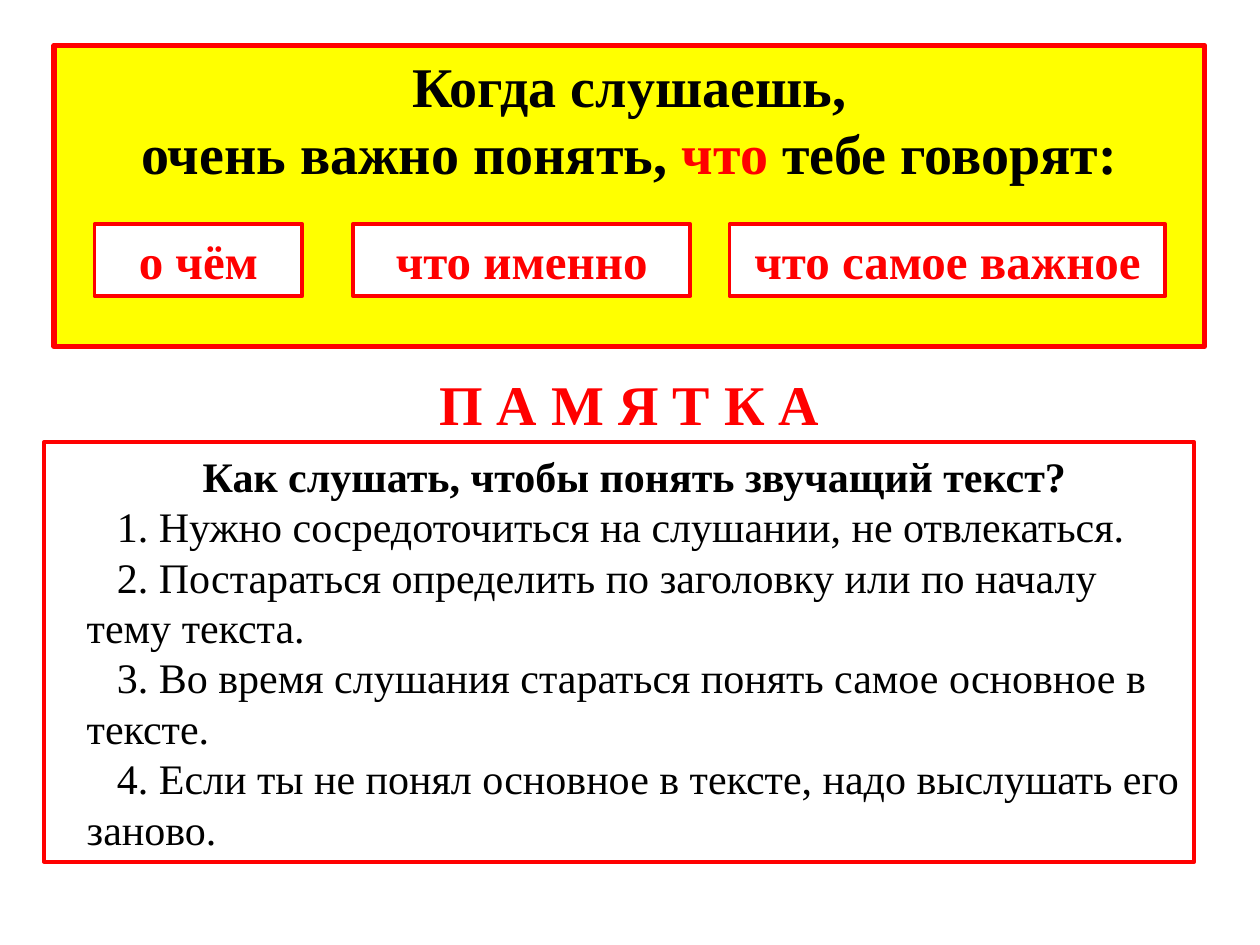
from pptx import Presentation
from pptx.dml.color import RGBColor
from pptx.enum.shapes import MSO_SHAPE
from pptx.enum.text import MSO_ANCHOR, PP_ALIGN
from pptx.util import Inches, Pt
from lxml import etree

RED = RGBColor(0xFF, 0x00, 0x00)
YELLOW = RGBColor(0xFF, 0xFF, 0x00)
WHITE = RGBColor(0xFF, 0xFF, 0xFF)
BLACK = RGBColor(0x00, 0x00, 0x00)
RECTANGLE = MSO_SHAPE.RECTANGLE
TOP, MIDDLE = MSO_ANCHOR.TOP, MSO_ANCHOR.MIDDLE
LEFT, CENTER = PP_ALIGN.LEFT, PP_ALIGN.CENTER
DRAWING = "{http://schemas.openxmlformats.org/drawingml/2006/main}"


class MemoSlide:
    font_name = "Times New Roman"
    indent = Inches(0.24)

    def __init__(self, page):
        self.page = page

    def rectangle(self, left, top, width, height, line_width, fill=None, anchor=TOP):
        box = self.page.shapes.add_shape(
            RECTANGLE, Inches(left), Inches(top), Inches(width), Inches(height))
        box.shadow.inherit = False
        if fill is None:
            box.fill.background()
        else:
            box.fill.solid()
            box.fill.fore_color.rgb = fill
        box.line.color.rgb = RED
        box.line.width = Pt(line_width)
        box.text_frame.word_wrap = True
        box.text_frame.vertical_anchor = anchor
        return box

    def text_box(self, left, top, width, height):
        box = self.page.shapes.add_textbox(
            Inches(left), Inches(top), Inches(width), Inches(height))
        box.text_frame.word_wrap = True
        return box

    def style(self, para, size, color, bold=True, align=CENTER):
        para.alignment = align
        for span in para.runs:
            span.font.name = self.font_name
            span.font.size = Pt(size)
            span.font.bold = bold
            span.font.color.rgb = color

    def set_text(self, box, text, size, color):
        box.text_frame.text = text
        for para in box.text_frame.paragraphs:
            self.style(para, size, color)

    def number(self, para):
        properties = para._p.get_or_add_pPr()
        properties.set("marL", str(self.indent))
        properties.set("indent", str(self.indent))
        etree.SubElement(properties, DRAWING + "buFont", typeface=self.font_name)
        etree.SubElement(properties, DRAWING + "buAutoNum", type="arabicPeriod")


def main():
    deck = Presentation()
    deck.slide_width, deck.slide_height = Inches(10), Inches(7.5)
    memo = MemoSlide(deck.slides.add_slide(deck.slide_layouts[6]))

    # Yellow panel with one highlighted word
    panel = memo.rectangle(0.43, 0.36, 9.13, 2.39, 3, YELLOW)
    memo.set_text(panel, "Когда слушаешь,\nочень важно понять, ", 32, BLACK)
    sentence = panel.text_frame.paragraphs[1]
    for text in ("что", " тебе говорят:"):
        sentence.add_run().text = text
    memo.style(sentence, 32, BLACK)
    sentence.runs[1].font.color.rgb = RED

    # Three questions
    for left, width, question in ((0.75, 1.65, "о чём"),
                                  (2.8, 2.68, "что именно"),
                                  (5.79, 3.46, "что самое важное")):
        label = memo.rectangle(left, 1.78, width, 0.57, 2.25, WHITE)
        memo.set_text(label, question, 28, RED)

    # Heading
    memo.set_text(memo.text_box(2.87, 2.88, 4.25, 0.64), "П А М Я Т К А", 32, RED)

    # Numbered rules
    rules = memo.rectangle(0.35, 3.51, 9.13, 3.33, 2.25, anchor=MIDDLE)
    memo.set_text(rules, "Как слушать, чтобы понять звучащий текст?", 24, BLACK)
    title = rules.text_frame.paragraphs[0]
    title._p.get_or_add_pPr().set("indent", str(memo.indent))
    for rule in ("Нужно сосредоточиться на слушании, не отвлекаться.",
                 "Постараться определить по заголовку или по началу тему текста.",
                 "Во время слушания стараться понять самое основное в тексте.",
                 "Если ты не понял основное в тексте, надо выслушать его заново."):
        para = rules.text_frame.add_paragraph()
        para.text = " " + rule
        memo.style(para, 24, BLACK, bold=False, align=LEFT)
        memo.number(para)

    deck.save("out.pptx")


if __name__ == "__main__":
    main()
